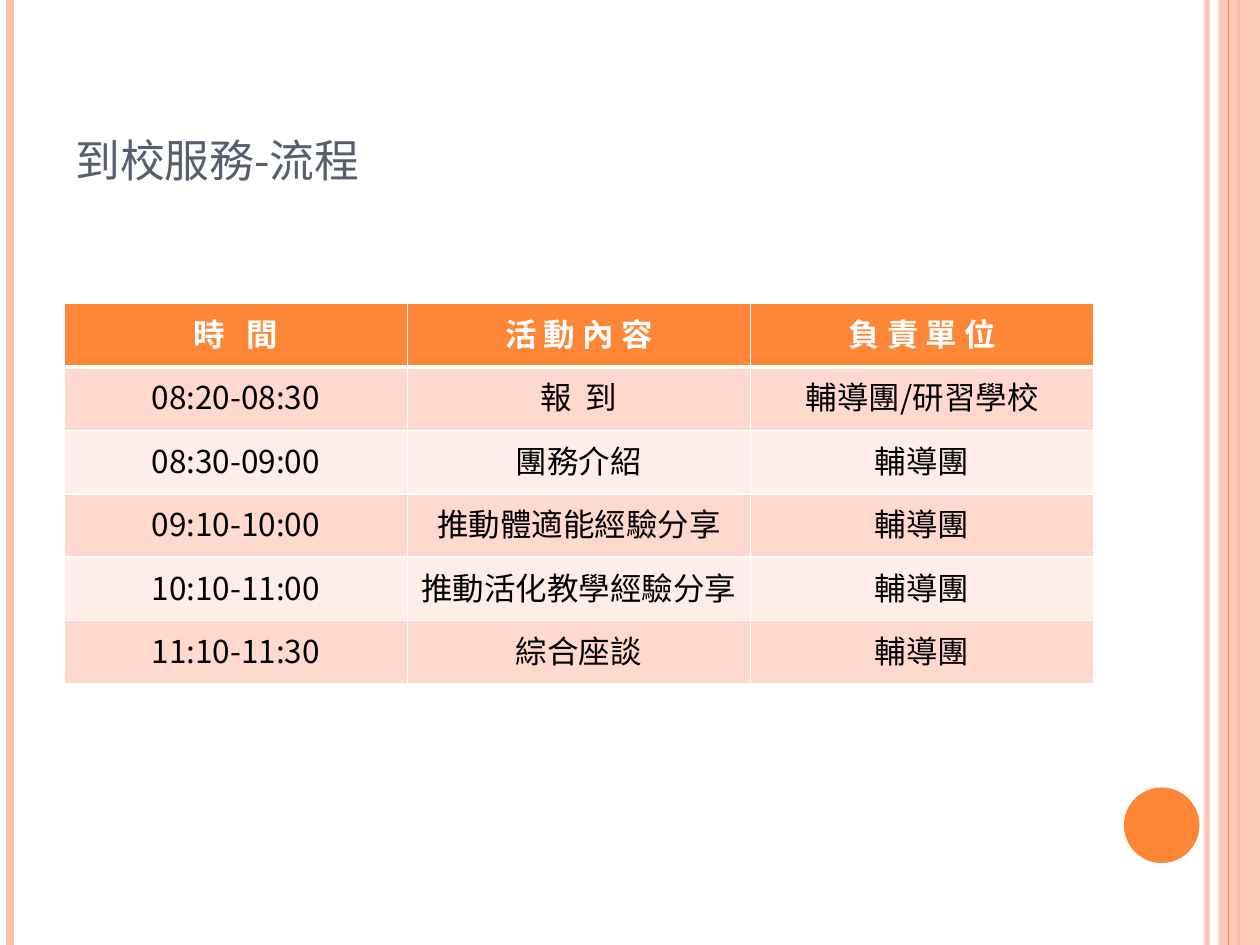
"""Build the school visit schedule slide."""
from lxml import etree
from pptx import Presentation
from pptx.dml.color import RGBColor
from pptx.enum import shapes, text
from pptx.oxml import ns
from pptx.util import Inches, Pt

FONT = "Noto Sans CJK SC"
ORANGE = RGBColor(0xFE, 0x86, 0x37)
PEACH = RGBColor(0xFE, 0xC3, 0xAE)
SLATE = RGBColor(0x57, 0x5F, 0x6D)
WHITE = RGBColor(0xFF, 0xFF, 0xFF)
BLACK = RGBColor(0, 0, 0)
BANDS = RGBColor(0xFF, 0xED, 0xE8), RGBColor(0xFF, 0xD9, 0xCE)

TITLE = "到校服務-流程"
TEAM = "輔導團"
ROWS = [
    ("時 間", "活 動 內 容", "負 責 單 位"),
    ("08:20-08:30", "報 到", "輔導團/研習學校"),
    ("08:30-09:00", "團務介紹", TEAM),
    ("09:10-10:00", "推動體適能經驗分享", TEAM),
    ("10:10-11:00", "推動活化教學經驗分享", TEAM),
    ("11:10-11:30", "綜合座談", TEAM),
]
GAPS = {"時 間": 4, "報 到": 2}
RULES = [(9.58, PEACH, 3, 93), (0.08, PEACH, 4.5, 100), (9.83, ORANGE, 1.5, 100)]
EDGE = (9.75, ORANGE, 0.75, 100)
LEFT, TOP, WIDE, HIGH = 0.51, 2.41, 8.17, 3.02


def add(parent, tag, **attrs):
    node = etree.SubElement(parent, ns.qn(tag))
    for key, val in attrs.items():
        node.set(key, str(val))
    return node


def fade(shape, share):
    for color in shape._element.spPr.iter(ns.qn("a:srgbClr")):
        add(color, "a:alpha", val=share * 1000)


def write(frame, words, size=18, color=BLACK, bold=False, align=None, gap=0, small=False):
    para = frame.paragraphs[0]
    para.alignment = align
    run = para.add_run()
    run.text = words
    font = run.font
    font.size, font.bold, font.name = Pt(size), bold, FONT
    font.color.rgb = color
    props = run._r.get_or_add_rPr()
    add(props, "a:ea", typeface=FONT)
    if gap:
        props.set("spc", str(gap * 100))
    if small:
        props.set("cap", "small")


def rule(slide, x, color, width, share):
    line = slide.shapes.add_connector(
        shapes.MSO_CONNECTOR.STRAIGHT, Inches(x), 0, Inches(x), Inches(7.5))
    line.line.color.rgb = color
    line.line.width = Pt(width)
    if share < 100:
        fade(line, share)
    add(line._element.spPr, "a:effectLst")


def solid(slide, kind, box, color):
    shape = slide.shapes.add_shape(kind, *map(Inches, box))
    shape.shadow.inherit = False
    shape.fill.solid()
    shape.fill.fore_color.rgb = color
    shape.line.fill.background()
    return shape


def border(cell, head):
    props = cell._tc.get_or_add_tcPr()
    for at, side in enumerate(("L", "R", "T", "B")):
        width = 3 if head and side == "B" else 1
        line = etree.Element(ns.qn(f"a:ln{side}"), w=str(Pt(width)))
        add(add(line, "a:solidFill"), "a:srgbClr", val=WHITE)
        props.insert(at, line)


def schedule(slide):
    grid = slide.shapes.add_table(
        len(ROWS), len(ROWS[0]), *map(Inches, (LEFT, TOP, WIDE, HIGH))).table
    for row in grid.rows:
        row.height = Inches(HIGH / len(ROWS))
    for r, row in enumerate(ROWS):
        head = r == 0
        for c, words in enumerate(row):
            cell = grid.cell(r, c)
            cell.fill.solid()
            cell.fill.fore_color.rgb = ORANGE if head else BANDS[r % 2]
            border(cell, head)
            write(cell.text_frame, words, color=WHITE if head else BLACK, bold=head,
                  align=text.PP_ALIGN.CENTER, gap=GAPS.get(words, 0))


def main():
    deck = Presentation()
    deck.slide_width, deck.slide_height = Inches(10), Inches(7.5)
    slide = deck.slides.add_slide(deck.slide_layouts[6])
    for item in RULES:
        rule(slide, *item)
    band = solid(slide, shapes.MSO_SHAPE.RECTANGLE, (9.67, 0, 0.33, 7.5), PEACH)
    fade(band, 87)
    rule(slide, *EDGE)
    solid(slide, shapes.MSO_SHAPE.OVAL, (8.92, 6.25, 0.6, 0.6), ORANGE)
    frame = slide.shapes.add_textbox(*map(Inches, (0.5, 0.3, 8.17, 1.25))).text_frame
    frame.word_wrap = True
    frame.vertical_anchor = text.MSO_ANCHOR.BOTTOM
    write(frame, TITLE, size=32, color=SLATE, small=True)
    schedule(slide)
    deck.save("out.pptx")


if __name__ == "__main__":
    main()
